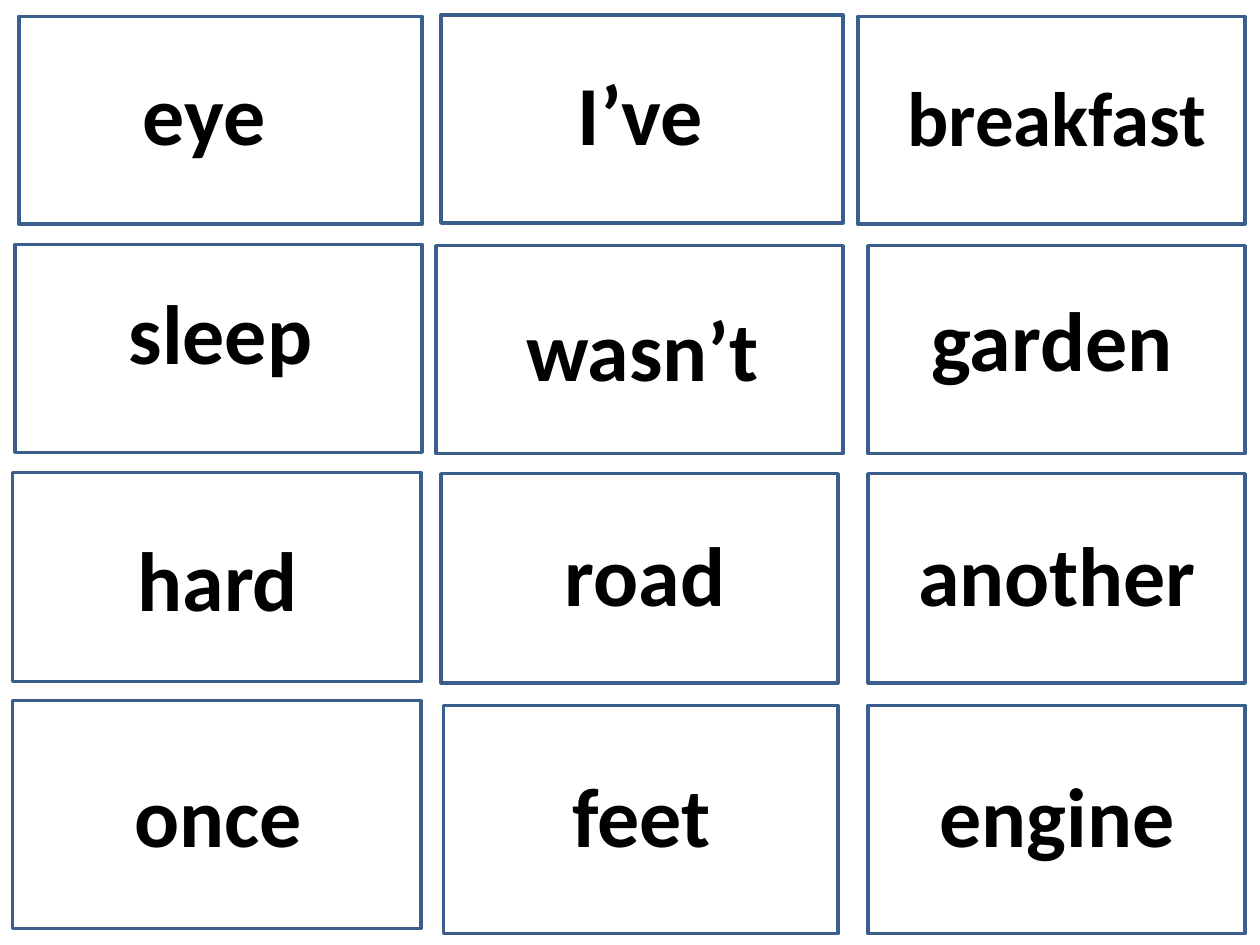
import pptx
import pptx.dml.color
import pptx.enum.shapes
import pptx.enum.text
import pptx.util

Inches = pptx.util.Inches

# Each card: frame (left, top, width, height), word, word (left, top), size
CARDS = [
    ((0.15, 0.13, 3.2, 1.65), "eye", (0.28, 0.44), 48),
    ((3.5, 0.12, 3.19, 1.65), "I’ve", (3.74, 0.44), 48),
    ((6.81, 0.13, 3.07, 1.65), "breakfast", (7.05, 0.5), 44),
    ((0.12, 1.94, 3.23, 1.65), "sleep", (0.41, 2.18), 48),
    ((3.46, 1.95, 3.23, 1.65), "wasn’t", (3.76, 2.31), 48),
    ((6.89, 1.95, 2.99, 1.65), "garden", (7.01, 2.23), 48),
    ((0.1, 3.75, 3.24, 1.66), "hard", (0.39, 4.14), 48),
    ((3.5, 3.76, 3.15, 1.66), "road", (3.78, 4.1), 48),
    ((6.89, 3.76, 2.99, 1.66), "another", (7.05, 4.1), 48),
    ((0.1, 5.56, 3.24, 1.81), "once", (0.39, 6.01), 48),
    ((3.52, 5.6, 3.13, 1.81), "feet", (3.75, 6.01), 48),
    ((6.89, 5.6, 2.99, 1.81), "engine", (7.05, 6.01), 48),
]
WIDTH = 2.68
HEIGHTS = {48: 0.91, 44: 0.84}


def color(code):
    return pptx.dml.color.RGBColor.from_string(code)


def add_frame(slide, box):
    frame = slide.shapes.add_shape(
        pptx.enum.shapes.MSO_SHAPE.RECTANGLE, *map(Inches, box))
    frame.shadow.inherit = False
    frame.fill.background()
    frame.line.color.rgb = color("3A5F8C")
    frame.line.width = pptx.util.Pt(2)


def add_word(slide, word, spot, size):
    box = slide.shapes.add_textbox(
        *map(Inches, (*spot, WIDTH, HEIGHTS[size])))
    text = box.text_frame
    text.word_wrap = True
    text.auto_size = pptx.enum.text.MSO_AUTO_SIZE.SHAPE_TO_FIT_TEXT
    para = text.paragraphs[0]
    para.alignment = pptx.enum.text.PP_ALIGN.CENTER
    run = para.add_run()
    run.text = word
    run.font.name = "Calibri"
    run.font.size = pptx.util.Pt(size)
    run.font.bold = True
    run.font.color.rgb = color("000000")


def main():
    deck = pptx.Presentation()
    deck.slide_width, deck.slide_height = Inches(10), Inches(7.5)
    slide = deck.slides.add_slide(deck.slide_layouts[6])
    for box, word, spot, size in CARDS:
        add_frame(slide, box)
        add_word(slide, word, spot, size)
    deck.save("out.pptx")


if __name__ == "__main__":
    main()
